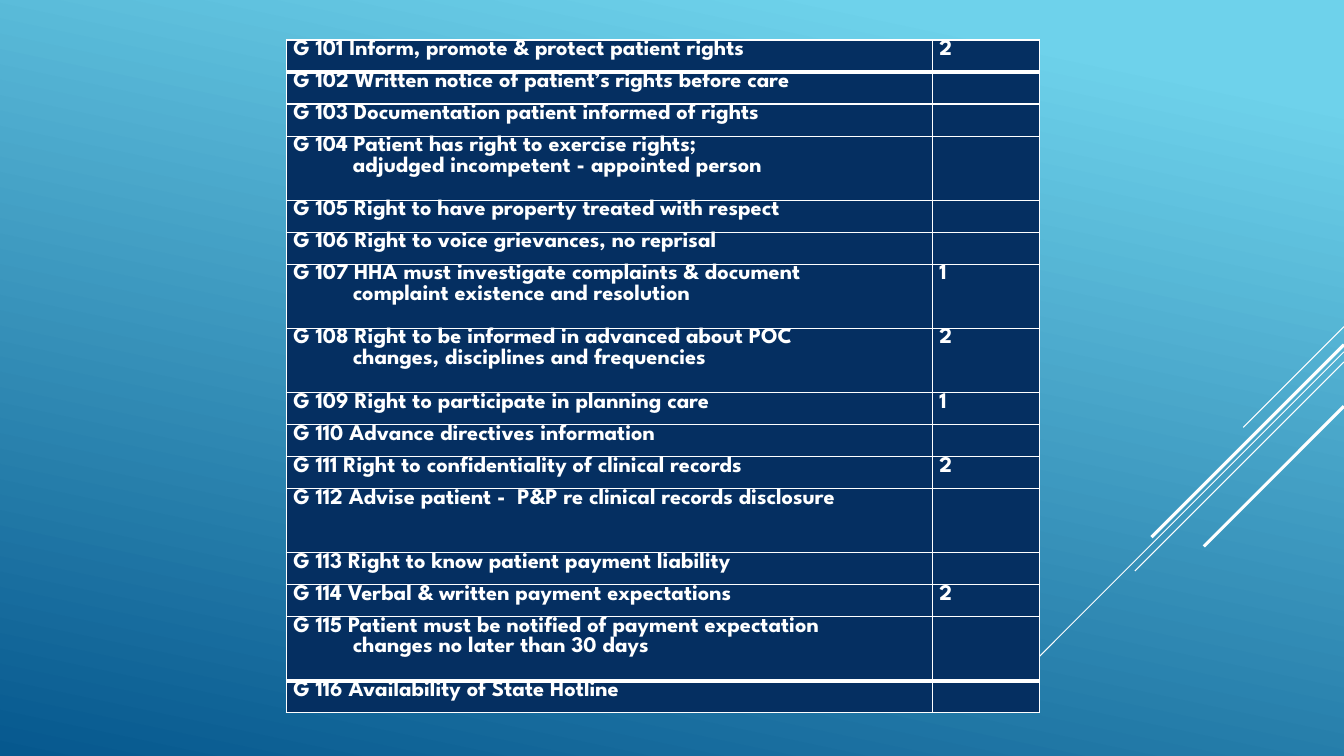
from lxml.etree import SubElement
from pptx import Presentation
from pptx.dml.color import RGBColor
from pptx.enum.shapes import MSO_CONNECTOR
from pptx.oxml import parse_xml
from pptx.oxml.ns import nsdecls, qn
from pptx.util import Pt

WHITE = "FFFFFF"
NAVY = "052F61"
BACKGROUND_STOPS = [(0.1, "6ED2EB"), (1, "06588E")]
FONT = "League Spartan"

# Requirement lines, citation count, row height in units
REQUIREMENTS = [
    (["G 101 Inform, promote & protect patient rights"], "2", 1),
    (["G 102 Written notice of patient’s rights before care"], "", 1),
    (["G 103 Documentation patient informed of rights"], "", 1),
    (["G 104 Patient has right to exercise rights;",
      "adjudged incompetent - appointed person"], "", 2),
    (["G 105 Right to have property treated with respect"], "", 1),
    (["G 106 Right to voice grievances, no reprisal"], "", 1),
    (["G 107 HHA must investigate complaints & document",
      "complaint existence and resolution"], "1", 2),
    (["G 108 Right to be informed in advanced about POC",
      "changes, disciplines and frequencies"], "2", 2),
    (["G 109 Right to participate in planning care"], "1", 1),
    (["G 110 Advance directives information"], "", 1),
    (["G 111 Right to confidentiality of clinical records"], "2", 1),
    (["G 112 Advise patient -  P&P re clinical records disclosure"], "", 2),
    (["G 113 Right to know patient payment liability"], "", 1),
    (["G 114 Verbal & written payment expectations"], "2", 1),
    (["G 115 Patient must be notified of payment expectation",
      "changes no later than 30 days"], "", 2),
    (["G 116 Availability of State Hotline"], "", 1),
]

SLIDE_WIDTH, SLIDE_HEIGHT = 960, 540
TABLE_LEFT, TABLE_TOP = 204.5, 28.6
COLUMN_WIDTHS = [461.5, 76.3]
ROW_UNIT = 22.9
CONTINUATION_INDENT = 42.5

# Start height at the right edge, horizontal run, line width; all fall at 45°
DIAGONALS = [
    (233.3, 72, 0.75),
    (251.3, 234.7, 0.75),
    (258.5, 149.4, 0.75),
    (246.2, 137.5, 2.25),
    (290.2, 100.1, 2.25),
]


def color(hex_code):
    return RGBColor.from_string(hex_code)


def add_diagonal(slide, start_y, run, width):
    line = slide.shapes.add_connector(
        MSO_CONNECTOR.STRAIGHT, Pt(SLIDE_WIDTH), Pt(start_y),
        Pt(SLIDE_WIDTH - run), Pt(start_y + run))
    line.line.color.rgb = color(WHITE)
    line.line.width = Pt(width)
    SubElement(line._element.spPr, qn("a:effectLst"))


def set_borders(cell, top, bottom):
    """Draw white borders, with the side borders one point wide."""
    properties = cell._tc.get_or_add_tcPr()
    widths = {"lnL": 1, "lnR": 1, "lnT": top, "lnB": bottom}
    for index, (tag, width) in enumerate(widths.items()):
        properties.insert(index, parse_xml(
            f'<a:{tag} {nsdecls("a")} w="{Pt(width)}"><a:solidFill>'
            f'<a:srgbClr val="{WHITE}"/></a:solidFill></a:{tag}>'))


def fill_cell(cell, lines):
    cell.fill.solid()
    cell.fill.fore_color.rgb = color(NAVY)
    cell.margin_left = cell.margin_right = Pt(5)
    cell.margin_top = cell.margin_bottom = 0
    cell.text = "\n".join(lines)
    for index, paragraph in enumerate(cell.text_frame.paragraphs):
        font = paragraph.font
        font.name, font.size, font.bold = FONT, Pt(16), True
        font.color.rgb = color(WHITE)
        if index:
            paragraph._p.get_or_add_pPr().set("marL", str(Pt(CONTINUATION_INDENT)))


def add_requirements_table(slide):
    units = sum(row[2] for row in REQUIREMENTS)
    table = slide.shapes.add_table(
        len(REQUIREMENTS), len(COLUMN_WIDTHS), Pt(TABLE_LEFT), Pt(TABLE_TOP),
        Pt(sum(COLUMN_WIDTHS)), Pt(units * ROW_UNIT)).table
    table.first_row = table.horz_banding = False
    for column, width in zip(table.columns, COLUMN_WIDTHS):
        column.width = Pt(width)
    thick_edges = {1, len(REQUIREMENTS) - 1}
    for index, (lines, count, height) in enumerate(REQUIREMENTS):
        table.rows[index].height = Pt(height * ROW_UNIT)
        top, bottom = (3 if edge in thick_edges else 1 for edge in (index, index + 1))
        for cell, content in zip(table.rows[index].cells, (lines, [count])):
            fill_cell(cell, content)
            set_borders(cell, top, bottom)


def main():
    presentation = Presentation()
    presentation.slide_width, presentation.slide_height = Pt(SLIDE_WIDTH), Pt(SLIDE_HEIGHT)
    slide = presentation.slides.add_slide(presentation.slide_layouts[6])
    background = slide.background.fill
    background.gradient()
    background.gradient_angle = 258
    for stop, (position, hex_code) in zip(background.gradient_stops, BACKGROUND_STOPS):
        stop.position = position
        stop.color.rgb = color(hex_code)
    for diagonal in DIAGONALS:
        add_diagonal(slide, *diagonal)
    add_requirements_table(slide)
    presentation.save("out.pptx")


if __name__ == "__main__":
    main()
